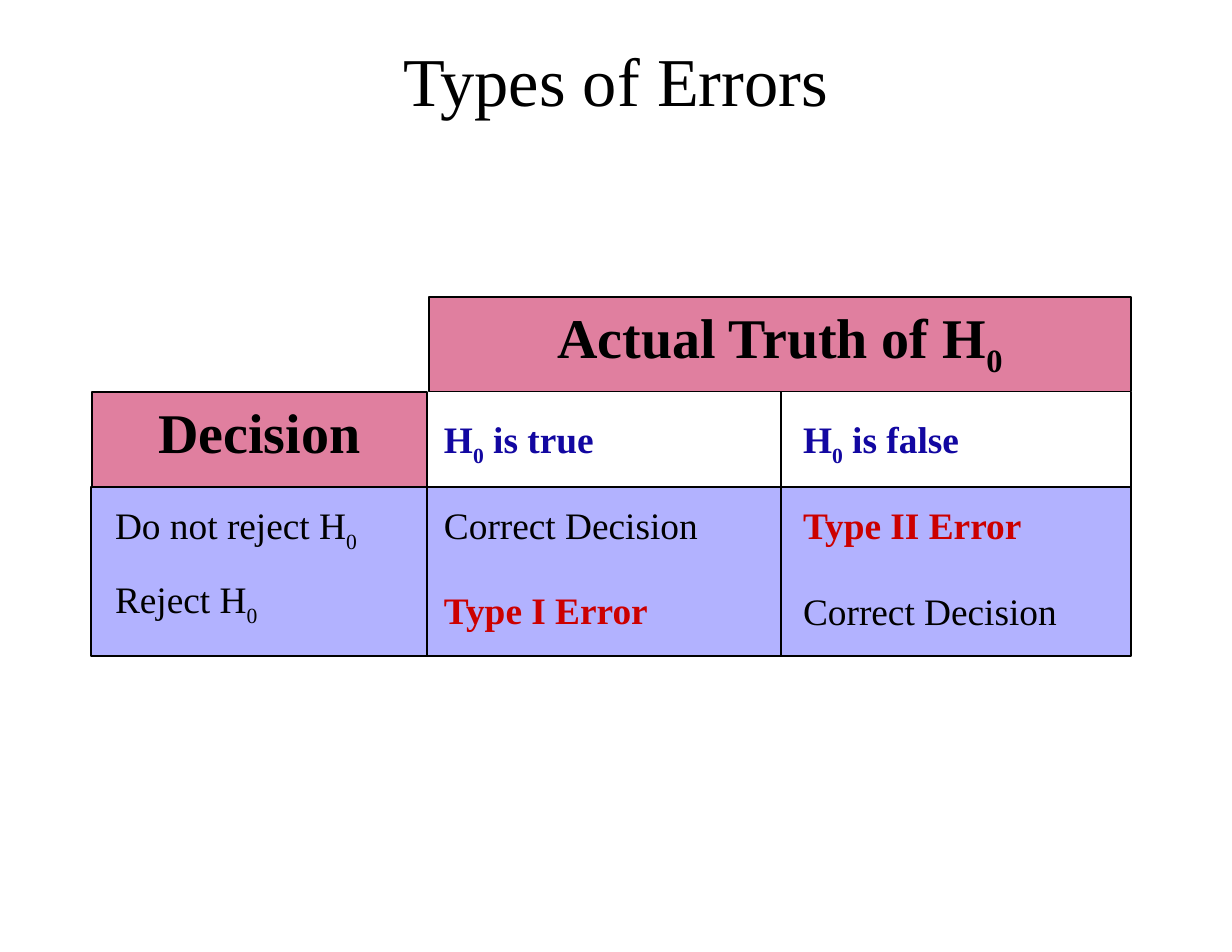
from lxml import etree
from pptx import Presentation, util as u
from pptx.dml.color import RGBColor
from pptx.enum import shapes, text
from pptx.oxml.ns import qn

COLORS = {
    "black": "000000",
    "header": "C20041",
    "body": "0000FF",
    "state": "1207A1",
    "error": "CC0000",
}
EMU_PER_PX = 914400 // 112


def px(length):
    return u.Emu(length * EMU_PER_PX)


class SlideBuilder:
    font_name = "Times New Roman"

    def __init__(self, slide):
        self.slide = slide

    def add_text(self, frame, content, size, color="black", bold=False, align=None):
        """Fill the frame's paragraph; an underscore starts a one-letter subscript."""
        paragraph = frame.paragraphs[0]
        paragraph.alignment = align
        plain, mark, rest = content.partition("_")
        for part, is_subscript in ((plain, False), (rest[:1], True), (rest[1:], False)):
            if not part:
                continue
            run = paragraph.add_run()
            run.text = part
            font = run.font
            font.name, font.size, font.bold = self.font_name, u.Pt(size), bold
            font.color.rgb = RGBColor.from_string(COLORS[color])
            if is_subscript:
                run._r.get_or_add_rPr().set("baseline", "-25000")
        return paragraph

    def title(self, content, left, top, width, height):
        shape = self.slide.shapes.title
        shape.left, shape.top = px(left), px(top)
        shape.width, shape.height = px(width), px(height)
        frame = shape.text_frame
        frame.auto_size = text.MSO_AUTO_SIZE.NONE
        frame.vertical_anchor = text.MSO_ANCHOR.MIDDLE
        self.add_text(frame, content, 44, align=text.PP_ALIGN.CENTER)

    def panel(self, left, top, right, bottom, fill, opacity, content=""):
        shape = self.slide.shapes.add_shape(
            shapes.MSO_SHAPE.RECTANGLE,
            px(left), px(top), px(right - left), px(bottom - top))
        shape.shadow.inherit = False
        shape.fill.solid()
        shape.fill.fore_color.rgb = RGBColor.from_string(COLORS[fill])
        color = shape._element.spPr.find(qn("a:solidFill"))[0]
        etree.SubElement(color, qn("a:alpha")).set("val", str(opacity * 1000))
        shape.line.color.rgb = RGBColor.from_string(COLORS["black"])
        shape.line.width = u.Pt(0.75)
        if content:
            frame = shape.text_frame
            frame.vertical_anchor = text.MSO_ANCHOR.TOP
            self.add_text(frame, content, 36, bold=True, align=text.PP_ALIGN.CENTER)

    def label(self, content, left, top, width, color="black", line_spacing=None):
        """Add a one-line cell text; every colour but black is also bold."""
        box = self.slide.shapes.add_textbox(px(left), px(top), px(width), px(57))
        frame = box.text_frame
        frame.word_wrap = True
        paragraph = self.add_text(frame, content, 24, color, bold=color != "black")
        if line_spacing:
            paragraph.line_spacing = line_spacing

    def vertical_line(self, x, top, bottom, width=0.75):
        line = self.slide.shapes.add_connector(
            shapes.MSO_CONNECTOR.STRAIGHT, px(x), px(top), px(x), px(bottom))
        line.line.color.rgb = RGBColor.from_string(COLORS["black"])
        line.line.width = u.Pt(width)
        etree.SubElement(line._element.spPr, qn("a:effectLst"))


def main():
    presentation = Presentation()
    presentation.slide_width, presentation.slide_height = px(1232), px(952)
    slide = presentation.slides.add_slide(presentation.slide_layouts[5])
    builder = SlideBuilder(slide)
    builder.title("Types of Errors", 0, 10, 1232, 138)

    left, truth_x, false_x, right = 91, 427, 781, 1131
    header_top, state_top, body_top, bottom = 297, 392, 487, 656
    builder.panel(left, body_top, right, bottom, "body", 30)
    builder.panel(truth_x + 2, header_top, right, state_top,
                  "header", 50, "Actual Truth of H_0")
    builder.panel(left + 1, state_top, truth_x, body_top, "header", 50, "Decision")

    decision_text, true_text, false_text = 104, 433, 792
    state_row, keep_row = 411, 497
    builder.label("H_0 is true", true_text, state_row, 340, "state")
    builder.label("H_0 is false", false_text, state_row, 338, "state")
    builder.label("Do not reject H_0", decision_text, keep_row, 320)
    builder.label("Reject H_0", decision_text, 571, 320)
    builder.label("Correct Decision", true_text, keep_row, 340)
    builder.label("Type I Error", true_text, 582, 340, "error")
    builder.label("Type II Error", false_text, keep_row, 338, "error")
    builder.label("Correct Decision", false_text, 588, 338, line_spacing=0.9)

    builder.vertical_line(false_x, state_top, bottom, 1)
    builder.vertical_line(truth_x, body_top, bottom)
    builder.vertical_line(right, state_top, body_top)
    presentation.save("out.pptx")


if __name__ == "__main__":
    main()
